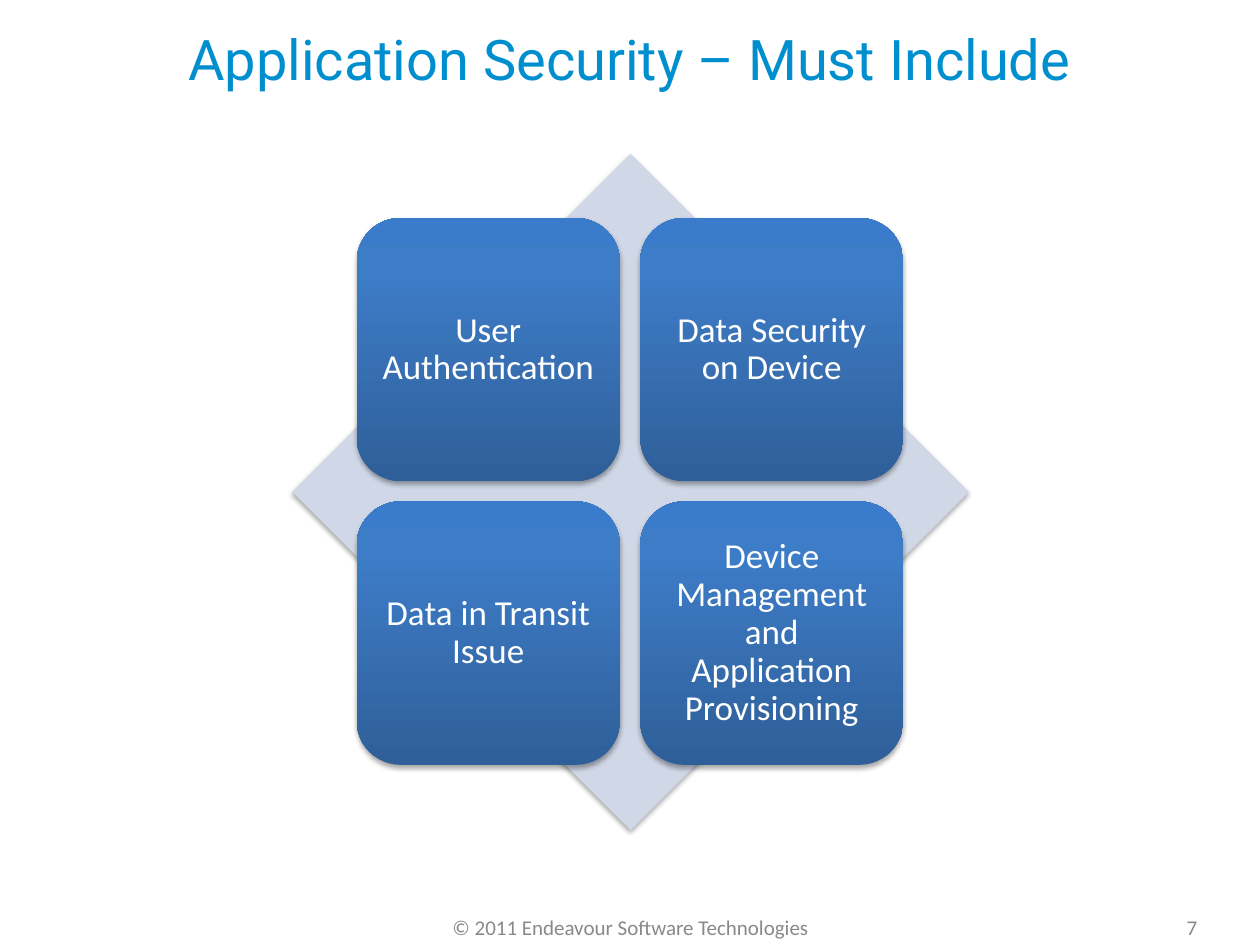
from copy import deepcopy

from pptx import Presentation
from pptx.dml.color import RGBColor
from pptx.enum.shapes import MSO_SHAPE
from pptx.enum.text import MSO_ANCHOR, PP_ALIGN
from pptx.oxml import parse_xml
from pptx.oxml.ns import nsdecls, qn
from pptx.util import Inches, Pt

SHADOW = (
    f'<a:effectLst {nsdecls("a")}>'
    f'<a:outerShdw blurRad="{Pt(3.1)}" dist="{Pt(1.8)}" dir="5400000" rotWithShape="0">'
    '<a:srgbClr val="000000"><a:alpha val="35000"/></a:srgbClr>'
    '</a:outerShdw></a:effectLst>'
)


def color(code):
    return RGBColor.from_string(code)


class Board:
    font = "Calibri"
    blues = [(0, "2F5F99"), (0.8, "3D7CC7"), (1, "3A7CCB")]

    def __init__(self, slide):
        self.slide = slide
        self.group = slide.shapes.add_group_shape()

    def label(self, shape, text, size, code, font=None):
        """Fill a shape with one centred paragraph."""
        frame = shape.text_frame
        frame.word_wrap = True
        frame.vertical_anchor = MSO_ANCHOR.MIDDLE
        para = frame.paragraphs[0]
        para.text = text
        para.alignment = PP_ALIGN.CENTER
        para.font.name = font or self.font
        para.font.size = Pt(size)
        para.font.color.rgb = color(code)
        return frame

    def title(self, text):
        shape = self.slide.shapes.title
        shape.left, shape.top = Inches(0.5), Inches(0)
        shape.width, shape.height = Inches(9), Inches(0.92)
        self.label(shape, text, 32, "008FCE", "Roboto")

    def shape(self, kind, left, top, side):
        """Add a square shape with a soft shadow and no line."""
        shape = self.group.shapes.add_shape(
            kind, Inches(left), Inches(top), Inches(side), Inches(side))
        shape.line.fill.background()
        shape._element.spPr.append(parse_xml(SHADOW))
        return shape

    def diamond(self, left, top, side):
        shape = self.shape(MSO_SHAPE.DIAMOND, left, top, side)
        shape.fill.solid()
        shape.fill.fore_color.rgb = color("D0D8E8")

    def tile(self, text, left, top, side):
        shape = self.shape(MSO_SHAPE.ROUNDED_RECTANGLE, left, top, side)
        fill = shape.fill
        fill.gradient()
        fill.gradient_angle = 90
        stops = shape._element.spPr.find(qn("a:gradFill")).find(qn("a:gsLst"))
        stops.append(deepcopy(stops[-1]))
        for stop, (place, code) in zip(fill.gradient_stops, self.blues):
            stop.position = place
            stop.color.rgb = color(code)
        frame = self.label(shape, text, 20, "FFFFFF")
        frame.margin_left = frame.margin_right = Inches(0.08)
        frame.margin_top = frame.margin_bottom = Inches(0.08)
        frame.paragraphs[0].line_spacing = 0.9

    def note(self, text, left, top, width, height):
        box = self.slide.shapes.add_textbox(
            Inches(left), Inches(top), Inches(width), Inches(height))
        self.label(box, text, 12, "898989")


def main():
    deck = Presentation()
    deck.slide_width, deck.slide_height = Inches(10), Inches(7.5)
    board = Board(deck.slides.add_slide(deck.slide_layouts[5]))

    board.title("Application Security – Must Include")
    board.diamond(2.32, 1.22, 5.37)
    topics = ["User Authentication", "Data Security on Device",
              "Data in Transit Issue",
              "Device Management and Application Provisioning"]
    step = 2.25
    for i, topic in enumerate(topics):
        row, col = divmod(i, 2)
        board.tile(topic, 2.83 + col * step, 1.73 + row * step, 2.09)
    board.note("© 2011 Endeavour Software Technologies", 3.42, 7.22, 3.17, 0.28)
    board.note("7", 8.92, 7.21, 1.08, 0.29)

    deck.save("out.pptx")


if __name__ == "__main__":
    main()
